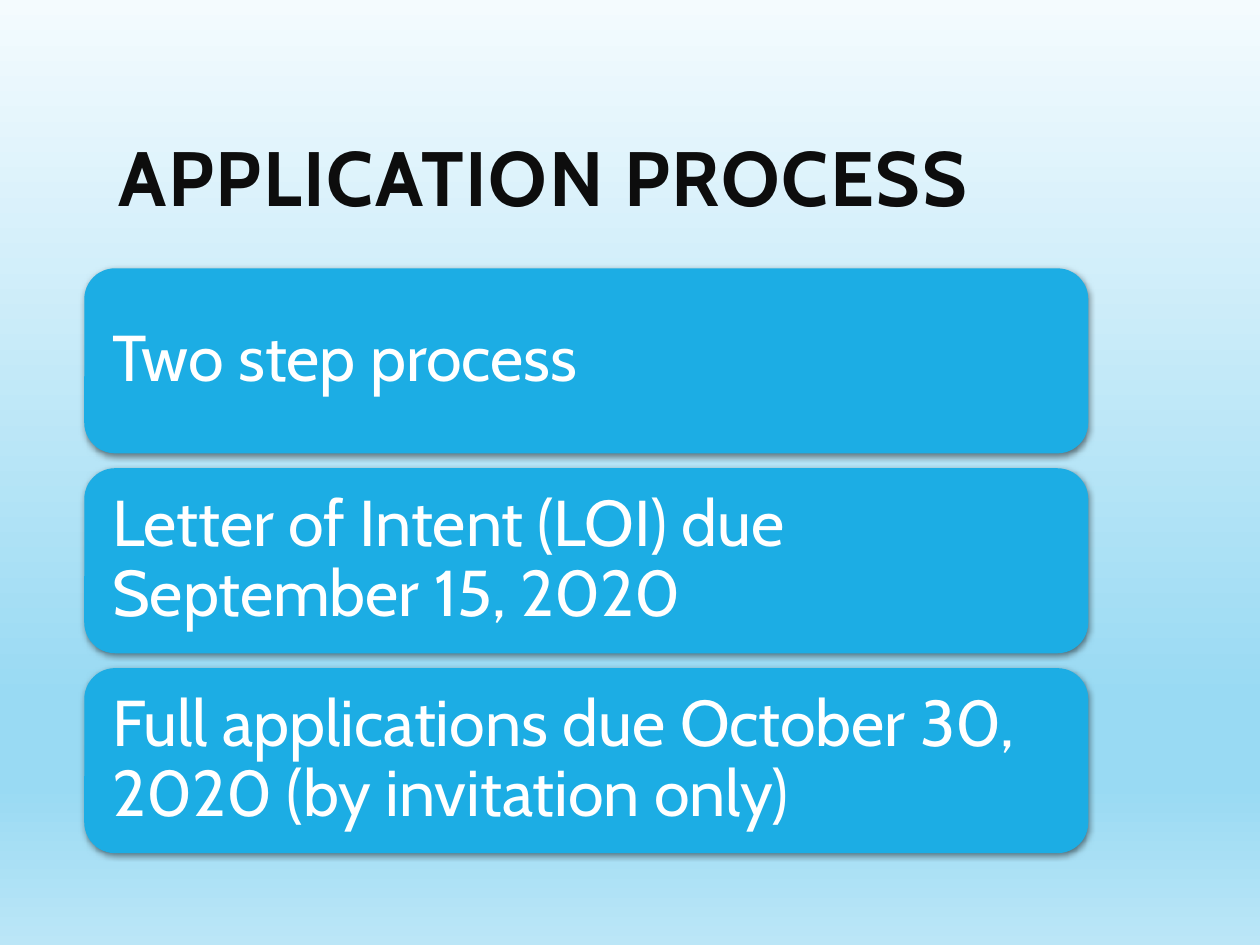
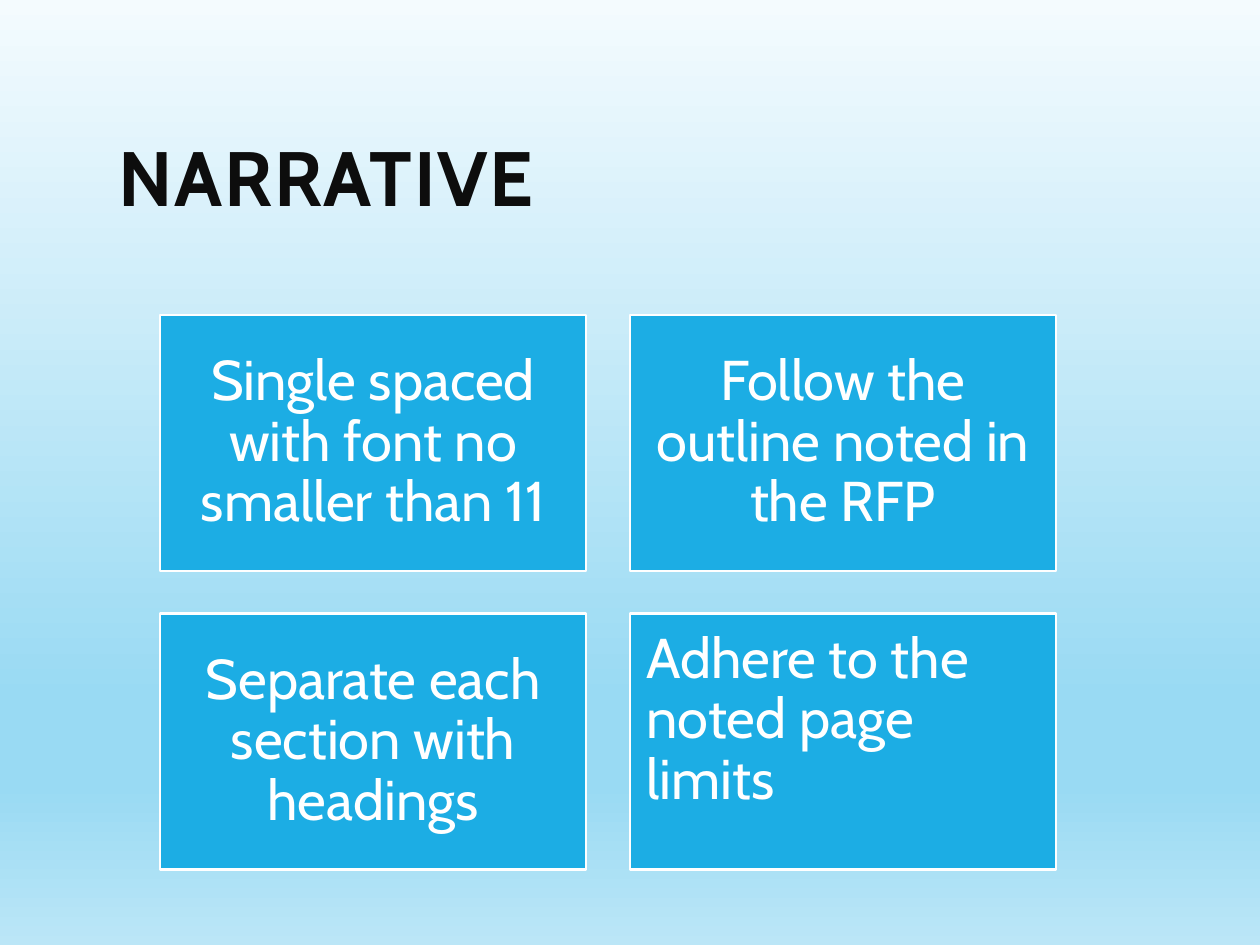
from dataclasses import dataclass
from typing import Any

from lxml import etree
from pptx import Presentation
from pptx import util as u
from pptx.dml.color import RGBColor
from pptx.enum import shapes, text
from pptx.oxml import ns

FONT = "Cabin"
BLUE = RGBColor(0x1C, 0xAD, 0xE4)
WHITE = RGBColor(0xFF, 0xFF, 0xFF)
INK = RGBColor(0x0D, 0x0D, 0x0D)
SHADOW = RGBColor(0x00, 0x00, 0x00)
SKY = RGBColor(0x99, 0xDA, 0xF3)
BACKGROUND = (
    (0, RGBColor(0xF4, 0xFB, 0xFE)),
    (74, SKY),
    (83, SKY),
    (100, RGBColor(0xBB, 0xE6, 0xF7)),
)
LEFT, CENTER = text.PP_ALIGN.LEFT, text.PP_ALIGN.CENTER
TOP, MIDDLE = text.MSO_ANCHOR.TOP, text.MSO_ANCHOR.MIDDLE
MARGINS = ("margin_left", "margin_top", "margin_right", "margin_bottom")


@dataclass(frozen=True)
class BoxGrid:
    kind: Any
    left: float
    top: float
    width: float
    height: float
    step_x: float
    step_y: float
    columns: int
    inset: float
    size: int
    raised: bool


@dataclass(frozen=True)
class Box:
    words: str
    align: Any = LEFT
    anchor: Any = MIDDLE


CARDS = BoxGrid(shapes.MSO_SHAPE.ROUNDED_RECTANGLE, 1.7, 5.41, 20.24, 3.73,
                0, 4.03, 1, 0.38, 37, True)
TILES = BoxGrid(shapes.MSO_SHAPE.RECTANGLE, 3.23, 6.35, 8.59, 5.16,
                9.47, 6.02, 2, 0.33, 32, False)

SLIDES = (
    ("APPLICATION PROCESS", CARDS, (
        Box("Two step process"),
        Box("Letter of Intent (LOI) due September 15, 2020"),
        Box("Full applications due October 30, 2020 (by invitation only)"),
    )),
    ("NARRATIVE", TILES, (
        Box("Single spaced with font no smaller than 11", CENTER),
        Box("Follow the outline noted in the RFP", CENTER),
        Box("Separate each section with headings", CENTER),
        Box("Adhere to the noted page limits", anchor=TOP),
    )),
)


def apply(target: Any, values: dict[str, Any]) -> None:
    for name, value in values.items():
        setattr(target, name, value)


def add_xml(parent: Any, tag: str, **attrs: Any) -> Any:
    return etree.SubElement(parent, ns.qn(tag), {k: str(v) for k, v in attrs.items()})


def paint_background(master: Any) -> None:
    fill = master.background.fill
    fill.gradient()
    fill.gradient_angle = 270
    stops = master.element.find(".//" + ns.qn("a:gsLst"))
    for stop in list(stops):
        stops.remove(stop)
    for percent, color in BACKGROUND:
        stop = add_xml(stops, "a:gs", pos=percent * 1000)
        add_xml(stop, "a:srgbClr", val=color)


def write(tf: Any, words: str, frame: dict[str, Any], para: dict[str, Any],
          font: dict[str, Any], color: RGBColor) -> Any:
    apply(tf, {"word_wrap": True, "auto_size": text.MSO_AUTO_SIZE.NONE, **frame})
    p = tf.paragraphs[0]
    apply(p, para)
    r = p.add_run()
    r.text = words
    apply(r.font, {"name": FONT, **font})
    r.font.color.rgb = color
    return r


def add_title(s: Any, words: str) -> None:
    sp = s.shapes.title
    apply(sp, {"left": u.Cm(2.13), "top": u.Cm(1.63),
               "width": u.Cm(20.24), "height": u.Cm(4.17)})
    r = write(sp.text_frame, words, {"vertical_anchor": MIDDLE},
              {"alignment": LEFT, "line_spacing": 0.8},
              {"size": u.Pt(44), "bold": True}, INK)
    r.font._element.set("spc", "100")


def add_shadow(sp: Any) -> None:
    effects = sp._element.spPr.find(ns.qn("a:effectLst"))
    shadow = add_xml(effects, "a:outerShdw", blurRad=u.Pt(4), dist=u.Pt(1),
                     dir=90 * 60000, algn="ctr", rotWithShape=0)
    color = add_xml(shadow, "a:srgbClr", val=SHADOW)
    add_xml(color, "a:alpha", val=50000)


def add_box(s: Any, grid: BoxGrid, index: int, box: Box) -> None:
    row, column = divmod(index, grid.columns)
    sp = s.shapes.add_shape(grid.kind,
                            u.Cm(grid.left + column * grid.step_x),
                            u.Cm(grid.top + row * grid.step_y),
                            u.Cm(grid.width), u.Cm(grid.height))
    sp.shadow.inherit = False
    sp.fill.solid()
    sp.fill.fore_color.rgb = BLUE
    if grid.raised:
        sp.line.fill.background()
        add_shadow(sp)
    else:
        sp.line.color.rgb = WHITE
        sp.line.width = u.Pt(1.25)
    frame = {"vertical_anchor": box.anchor, **dict.fromkeys(MARGINS, u.Cm(grid.inset))}
    write(sp.text_frame, box.words, frame,
          {"alignment": box.align, "line_spacing": 0.9},
          {"size": u.Pt(grid.size)}, WHITE)


def main() -> None:
    prs = Presentation()
    apply(prs, {"slide_width": u.Cm(25.4), "slide_height": u.Cm(19.05)})
    paint_background(prs.slide_master)
    for title, grid, boxes in SLIDES:
        s = prs.slides.add_slide(prs.slide_layouts.get_by_name("Title Only"))
        add_title(s, title)
        for index, box in enumerate(boxes):
            add_box(s, grid, index, box)
    prs.save("out.pptx")


if __name__ == "__main__":
    main()
